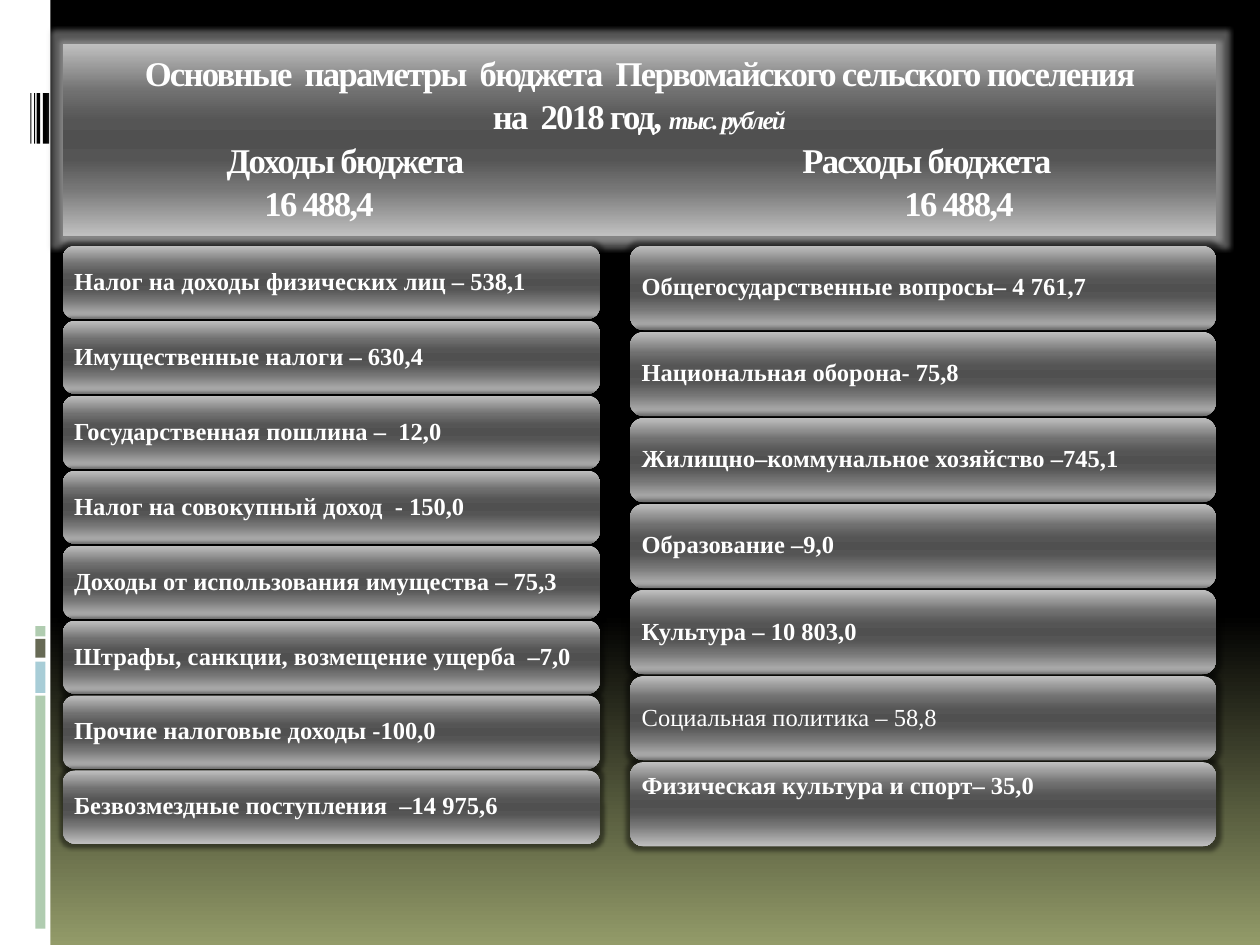
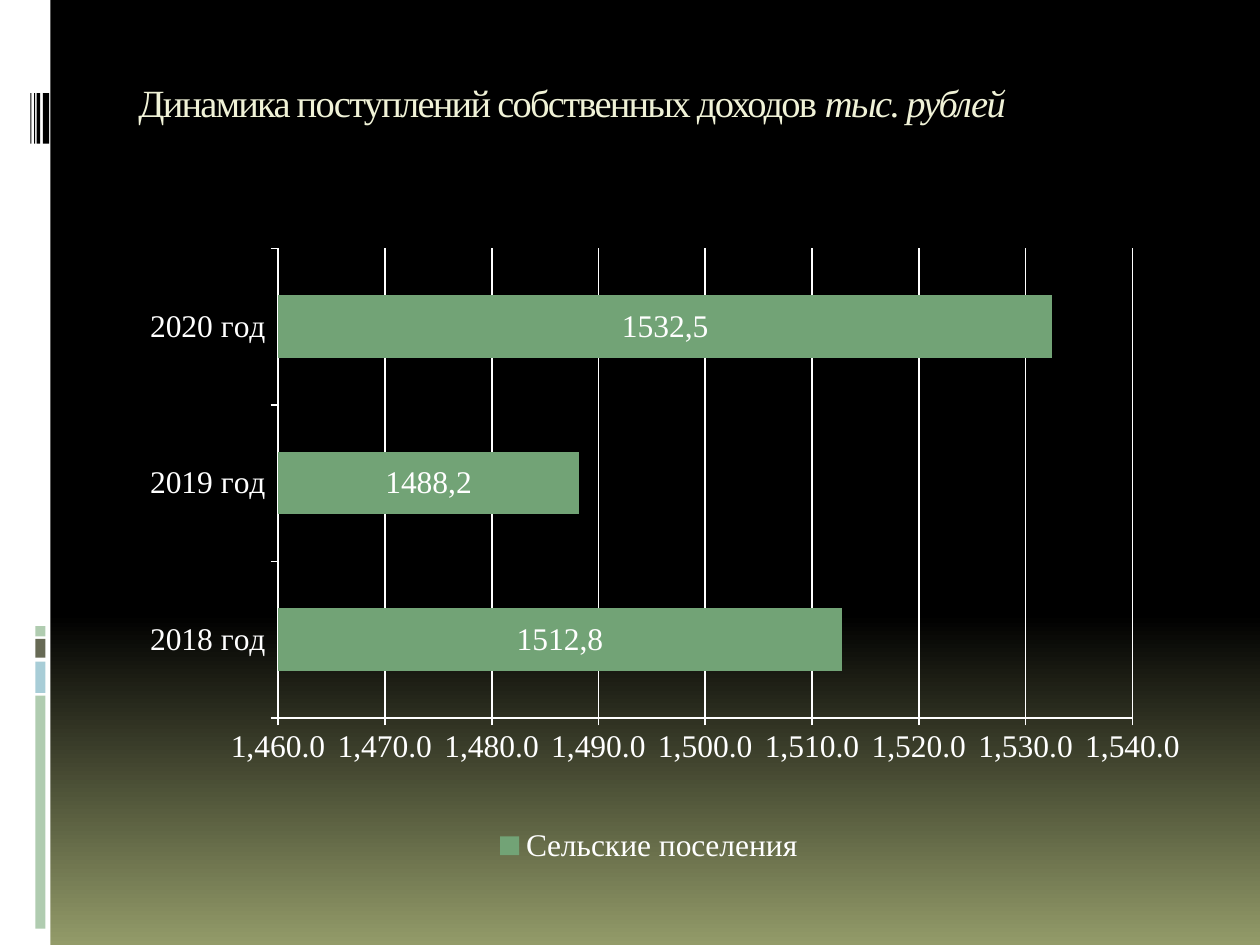
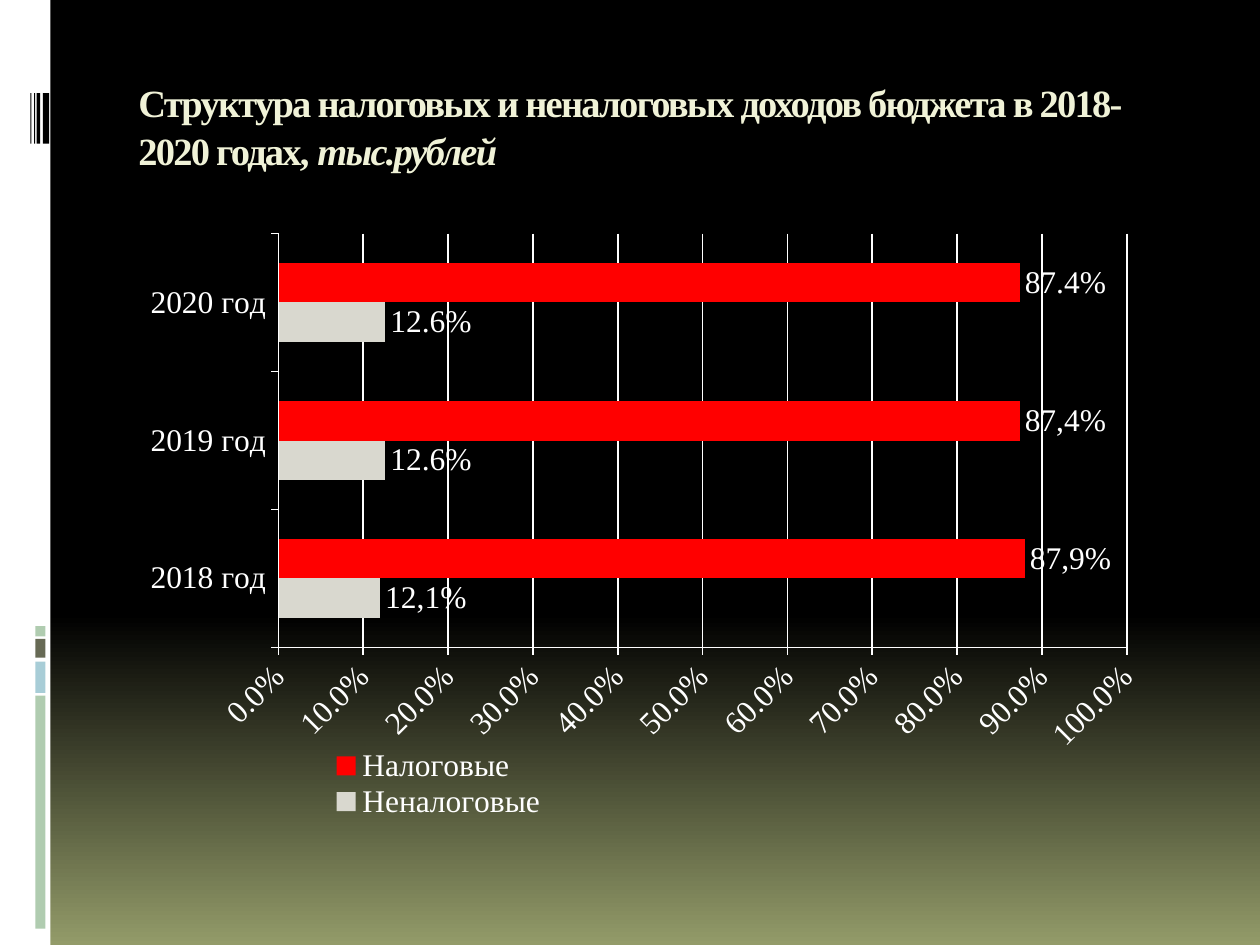
"""Build three slides on the budget of a rural settlement."""
from lxml.etree import SubElement
from pptx import Presentation
from pptx.chart.data import CategoryChartData
from pptx.dml.color import RGBColor
from pptx.enum.chart import (XL_CHART_TYPE as ChartType, XL_LABEL_POSITION as LabelPlace,
                             XL_LEGEND_POSITION as LegendPlace, XL_TICK_MARK as Tick)
from pptx.enum.shapes import MSO_SHAPE as Preset
from pptx.enum.text import MSO_ANCHOR as Anchor, PP_ALIGN as Align
from pptx.oxml.ns import qn
from pptx.util import Inches, Pt

FONT = "Times New Roman"
WHITE, BLACK, CREAM, GREEN = "FFFFFF", "000000", "F0F2D7", "B0CCB0"
NIGHT = [(0, BLACK), (65, BLACK), (100, "939B69")]
METAL = [(0, "C0C0C0"), (25, "707070"), (40, "555555"), (50, "505050"),
         (60, "555555"), (75, "767676"), (100, "C0C0C0")]
STRIPES = [
    (0, 0, 0.4, 7.5, WHITE),
    (0.28, 5.52, 0.08, 1.85, GREEN), (0.28, 5.25, 0.08, 0.25, "A8CDD7"),
    (0.28, 5.07, 0.08, 0.15, "676A55"), (0.28, 4.97, 0.08, 0.08, GREEN),
    (0.34, 0.74, 0.05, 0.4, BLACK), (0.29, 0.74, 0.03, 0.4, BLACK),
    (0.27, 0.74, 0.01, 0.4, BLACK), (0.24, 0.74, 0.01, 0.4, BLACK),
]

HEADING = [
    [("Основные  параметры  бюджета  Первомайского сельского поселения", 19.8, False)],
    [("на  2018 год, ", 19.8, False), ("тыс. рублей", 14.4, True)],
]
TOTALS = [
    (("Доходы бюджета", "Расходы бюджета"), (1.2, 5.77)),
    (("16 488,4", "16 488,4"), (1.5, 6.58)),
]
INCOME = [
    "Налог на доходы физических лиц – 538,1", "Имущественные налоги – 630,4",
    "Государственная пошлина –  12,0", "Налог на совокупный доход  - 150,0",
    "Доходы от использования имущества – 75,3",
    "Штрафы, санкции, возмещение ущерба  –7,0",
    "Прочие налоговые доходы -100,0", "Безвозмездные поступления  –14 975,6",
]
SPENDING = [
    "Общегосударственные вопросы– 4 761,7", "Национальная оборона- 75,8",
    "Жилищно–коммунальное хозяйство –745,1", "Образование –9,0",
    "Культура – 10 803,0", "Социальная политика – 58,8",
    "Физическая культура и спорт– 35,0",
]
PLAIN_ROW, TOP_ROW = SPENDING[-2:]
COLUMNS = [(INCOME, 0.5, 4.26, 0.58, 0.595), (SPENDING, 5, 4.65, 0.67, 0.683)]

YEARS = ["2018 год", "2019 год", "2020 год"]
CHARTS = [
    dict(title=("Динамика поступлений собственных доходов ", "тыс. рублей"), bold=False,
         kind=ChartType.BAR_STACKED, overlap=100, at=(0.5, 1.75, 9.03, 5.28),
         plot=(0.189, 0.042, 0.751, 0.706), legend=(0.37, 0.9, 0.29, 0.08),
         scale=(1460, 1540, 10), form="#,##0.0", place=LabelPlace.CENTER, turn=0,
         series=[("Сельские поселения", (1512.8, 1488.2, 1532.5), "72A376",
                  ("1512,8", "1488,2", "1532,5"))]),
    dict(title=("Структура налоговых и неналоговых доходов бюджета в 2018-2020 годах, ",
                "тыс.рублей"), bold=True,
         kind=ChartType.BAR_CLUSTERED, overlap=0, at=(0.51, 1.7, 9, 4.81),
         plot=(0.189, 0.032, 0.748, 0.683), legend=(0.22, 0.88, 0.22, 0.13),
         scale=(0, 1, 0.1), form="0.0%", place=LabelPlace.OUTSIDE_END, turn=-45,
         series=[("Неналоговые", (0.12, 0.126, 0.126), "D9D8CF", ("12,1%",)),
                 ("Налоговые", (0.88, 0.874, 0.874), "FF0000", ("87,9%", "87,4%"))]),
]


def color(value):
    return RGBColor.from_string(value)


def paint(fill, element, stops):
    fill.gradient()
    fill.gradient_angle = 270
    stop_list = element.find(".//" + qn("a:gsLst"))
    for stop in list(stop_list):
        stop_list.remove(stop)
    for share, value in stops:
        stop = SubElement(stop_list, qn("a:gs"), pos=str(share * 1000))
        SubElement(stop, qn("a:srgbClr"), val=value)


def add_shape(page, preset, *place):
    shape = page.shapes.add_shape(preset, *map(Inches, place))
    shape.shadow.inherit = False
    shape.line.fill.background()
    return shape


def add_panel(page, preset, place, halo):
    panel = add_shape(page, preset, *place)
    paint(panel.fill, panel.element, METAL)
    effects = panel.element.spPr.find(qn("a:effectLst"))
    glow = SubElement(effects, qn("a:glow"), rad=str(Pt(5)))
    tint = SubElement(glow, qn("a:srgbClr"), val=halo)
    SubElement(tint, qn("a:alpha"), val="45000")
    panel.text_frame.word_wrap = True
    return panel


def style(font, size, value=WHITE, bold=False, italic=False):
    font.name, font.size, font.bold, font.italic = FONT, Pt(size), bold, italic
    font.color.rgb = color(value)


def add_span(para, text, size, value=WHITE, bold=False, italic=False, tight=False):
    span = para.add_run()
    span.text = text
    style(span.font, size, value, bold, italic)
    if tight:
        span.font._element.set("spc", "-100")


def new_page(deck):
    page = deck.slides.add_slide(deck.slide_layouts[6])
    for *place, value in STRIPES:
        stripe = add_shape(page, Preset.RECTANGLE, *place)
        stripe.fill.solid()
        stripe.fill.fore_color.rgb = color(value)
    return page


def add_heading(page):
    frame = add_panel(page, Preset.RECTANGLE, (0.5, 0.35, 9.15, 1.52), "C0C0C0").text_frame
    frame.vertical_anchor = Anchor.TOP
    paras = [frame.paragraphs[0]] + [frame.add_paragraph() for _ in range(3)]
    for para in paras:
        para.line_spacing = 1.04
    for para, spans in zip(paras, HEADING):
        para.alignment = Align.CENTER
        for text, size, italic in spans:
            add_span(para, text, size, bold=True, italic=italic, tight=True)
    for para, (texts, stops) in zip(paras[len(HEADING):], TOTALS):
        para.alignment = Align.LEFT
        tabs = SubElement(para._p.get_or_add_pPr(), qn("a:tabLst"))
        for text, stop in zip(texts, stops):
            SubElement(tabs, qn("a:tab"), pos=str(Inches(stop)), algn="l")
            add_span(para, "\t" + text, 19.8, bold=True, tight=True)


def add_rows(page, rows, left, width, height, pitch):
    for index, text in enumerate(rows):
        place = (left, 1.95 + index * pitch, width, height)
        frame = add_panel(page, Preset.ROUNDED_RECTANGLE, place, BLACK).text_frame
        frame.margin_left = frame.margin_right = Inches(0.06)
        frame.margin_top = frame.margin_bottom = Inches(0.06)
        frame.vertical_anchor = Anchor.TOP if text == TOP_ROW else Anchor.MIDDLE
        para = frame.paragraphs[0]
        para.alignment, para.line_spacing = Align.LEFT, 0.9
        add_span(para, text, 14, bold=text != PLAIN_ROW)


def add_title(page, title, bold):
    box = page.shapes.add_textbox(*map(Inches, (1, 0.56, 8.5, 1)))
    box.text_frame.word_wrap = True
    para = box.text_frame.paragraphs[0]
    para.line_spacing = 1.04
    for text, italic in zip(title, (False, True)):
        add_span(para, text, 22, CREAM, bold, italic, tight=True)


def set_layout(parent, index, place, inner=False):
    for old in parent.findall(qn("c:layout")):
        parent.remove(old)
    layout = SubElement(parent, qn("c:layout"))
    parent.insert(index, layout)
    manual = SubElement(layout, qn("c:manualLayout"))
    if inner:
        SubElement(manual, qn("c:layoutTarget"), val="inner")
    for name in ("xMode", "yMode"):
        SubElement(manual, qn("c:" + name), val="edge")
    for name, share in zip("xywh", place):
        SubElement(manual, qn("c:" + name), val=str(share))


def style_axes(chart, scale, form, turn):
    values = chart.value_axis
    values.minimum_scale, values.maximum_scale, values.major_unit = scale
    values.tick_labels.number_format = form
    values.tick_labels.number_format_is_linked = False
    values.has_major_gridlines = True
    lines = [values.major_gridlines.format.line]
    for axis in (chart.category_axis, values):
        axis.major_tick_mark = Tick.OUTSIDE
        style(axis.tick_labels.font, 18)
        lines.append(axis.format.line)
    for line in lines:
        line.color.rgb = color(WHITE)
        line.width = Pt(1)
    body = chart.element.find(".//" + "/".join(map(qn, ("c:valAx", "c:txPr", "a:bodyPr"))))
    body.set("rot", str(turn * 60000))


def add_bars(page, spec):
    data = CategoryChartData(number_format=spec["form"])
    data.categories = YEARS
    for name, values, *_ in spec["series"]:
        data.add_series(name, values)
    frame = page.shapes.add_chart(spec["kind"], *map(Inches, spec["at"]), data)
    chart = frame.chart
    style(chart.font, 18)
    chart.has_title = False
    chart.has_legend = True
    chart.legend.position = LegendPlace.RIGHT
    chart.legend.include_in_layout = False
    style(chart.legend.font, 18)
    set_layout(chart.legend._element, 1, spec["legend"])
    set_layout(chart.element.find(".//" + qn("c:plotArea")), 0, spec["plot"], inner=True)
    style_axes(chart, spec["scale"], spec["form"], spec["turn"])
    plot = chart.plots[0]
    plot.vary_by_categories = False
    plot.gap_width, plot.overlap = 150, spec["overlap"]
    for series, (_, _, value, texts) in zip(plot.series, spec["series"]):
        series.format.fill.solid()
        series.format.fill.fore_color.rgb = color(value)
        labels = series.data_labels
        labels.show_value = True
        labels.number_format, labels.number_format_is_linked = spec["form"], False
        labels.position = spec["place"]
        style(labels.font, 18)
        for index, text in enumerate(texts):
            label = series.points[index].data_label
            add_span(label.text_frame.paragraphs[0], text, 18)
            label.position = spec["place"]


def main():
    deck = Presentation()
    deck.slide_width, deck.slide_height = Inches(10), Inches(7.5)
    master = deck.slide_master
    paint(master.background.fill, master.element, NIGHT)
    page = new_page(deck)
    add_heading(page)
    for column in COLUMNS:
        add_rows(page, *column)
    for spec in CHARTS:
        page = new_page(deck)
        add_title(page, spec["title"], spec["bold"])
        add_bars(page, spec)
    deck.save("out.pptx")


if __name__ == "__main__":
    main()
